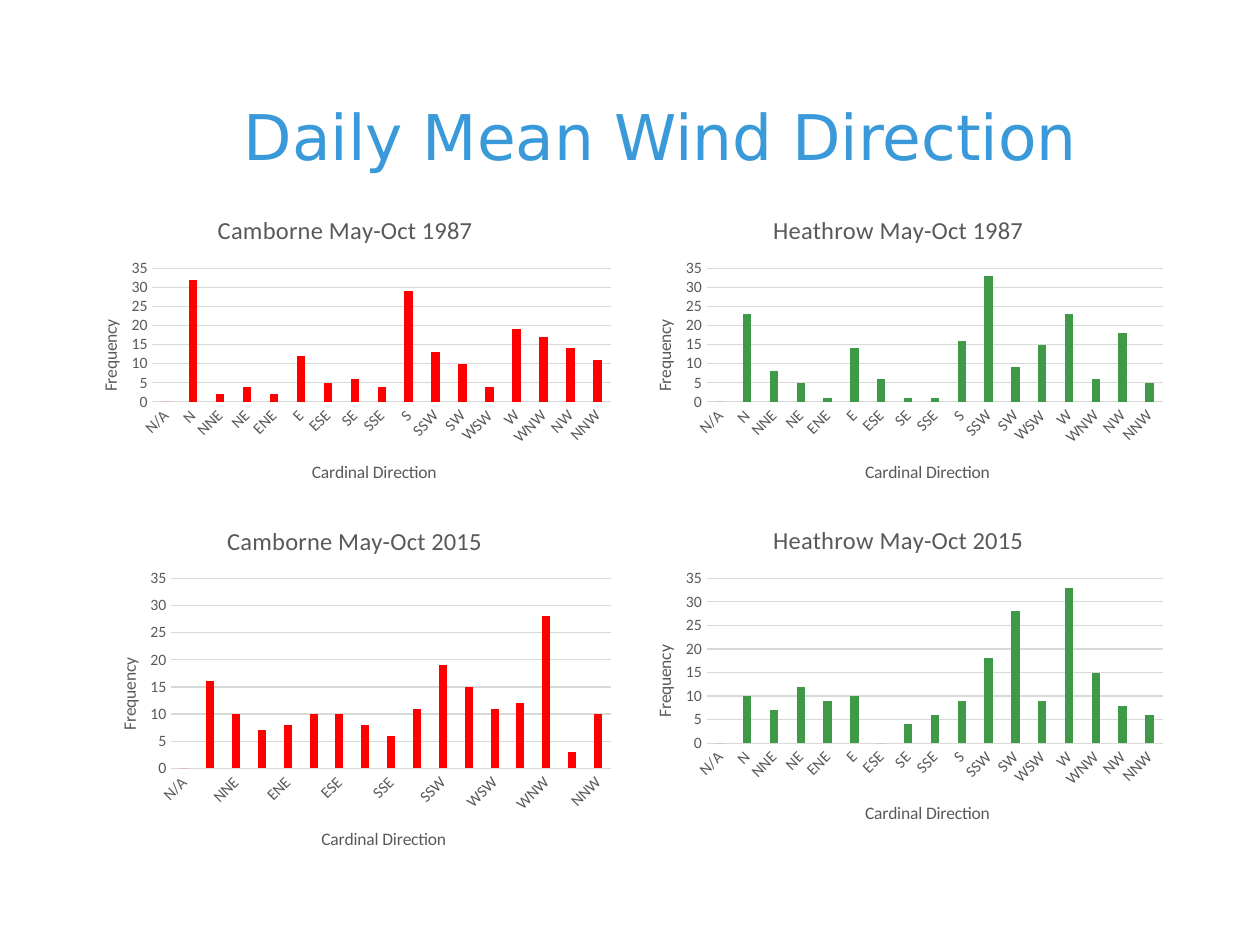
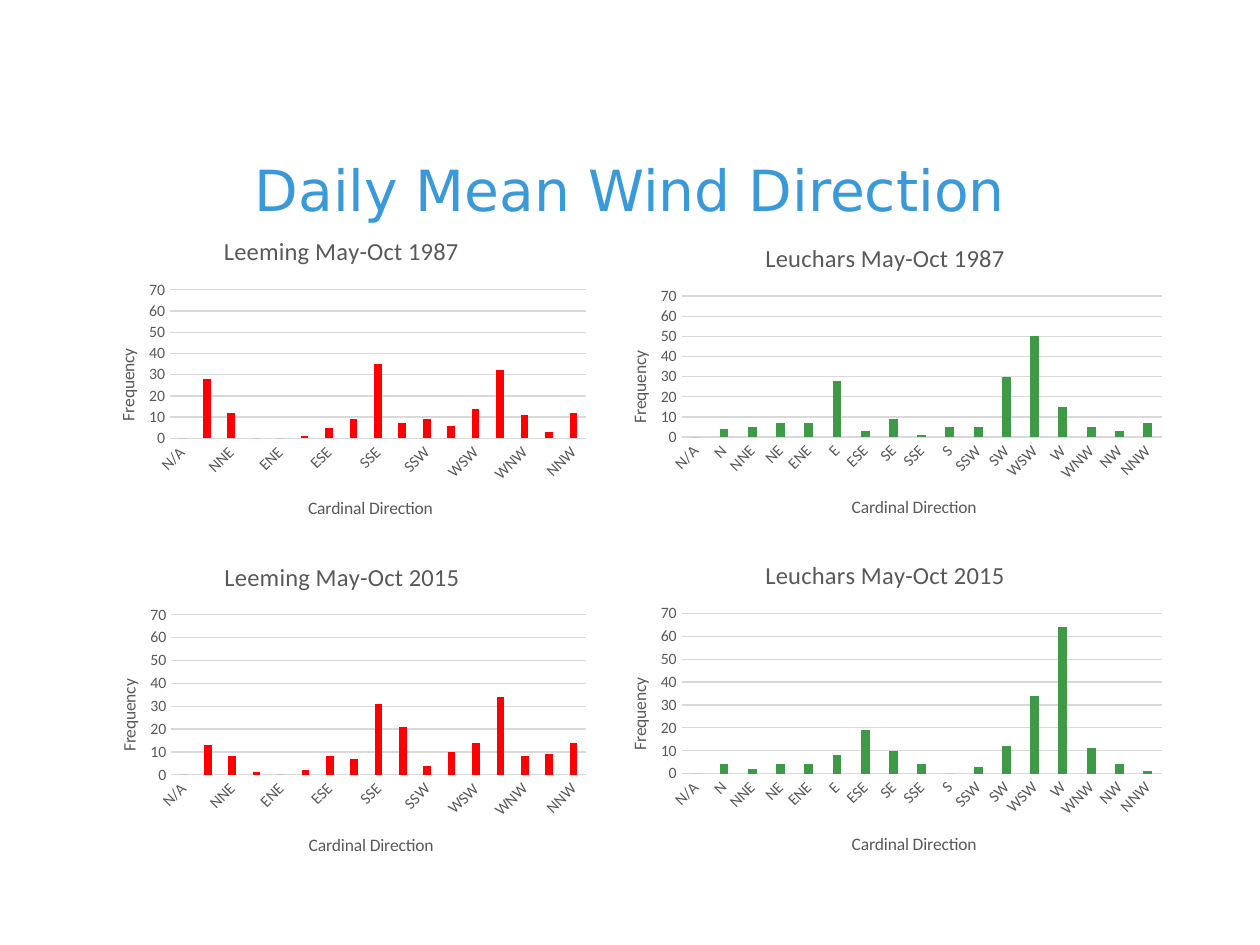
from lxml import etree
from pptx import Presentation
from pptx import util as u
from pptx.chart import data as chart_data
from pptx.dml import color
from pptx.enum import chart as ch, text
from pptx.oxml import ns

COLOURS = {"title": "3A9AD9", "label": "595959", "grid": "D9D9D9",
           "west": "FF0000", "east": "3F9A47"}
TITLE_FONT, CHART_FONT = "DejaVu Sans", "Calibri"
HEADING = "Daily Mean Wind Direction"
DIRECTIONS = ["N/A", "N", "NNE", "NE", "ENE", "E", "ESE", "SE", "SSE", "S",
              "SSW", "SW", "WSW", "W", "WNW", "NW", "NNW"]

# Plot margins and axis title offsets inside every chart, in inches
PLOT = {"left": 0.67, "top": 0.58, "right": 0.09, "bottom": 0.82}
DIRECTION_TITLE = {"half": 0.58, "from_bottom": 0.38}
FREQUENCY_TITLE = {"half": 0.15, "from_left": 0.22}

# Each chart: station and period, colour, box, daily counts by direction
SLIDES = [
    {"title_box": (0.5, 0.59, 9, 0.96), "title_size": 36, "indent": 0.59,
     "top": 35, "step": 5, "charts": [
         ("Camborne May-Oct 1987", "west", (0.54, 1.55, 4.4, 2.46),
          (0, 32, 2, 4, 2, 12, 5, 6, 4, 29, 13, 10, 4, 19, 17, 14, 11)),
         ("Camborne May-Oct 2015", "west", (0.69, 4.01, 4.25, 2.91),
          (0, 16, 10, 7, 8, 10, 10, 8, 6, 11, 19, 15, 11, 12, 28, 3, 10)),
         ("Heathrow May-Oct 1987", "east", (4.94, 1.55, 4.38, 2.46),
          (0, 23, 8, 5, 1, 14, 6, 1, 1, 16, 33, 9, 15, 23, 6, 18, 5)),
         ("Heathrow May-Oct 2015", "east", (4.94, 4.01, 4.38, 2.71),
          (0, 10, 7, 12, 9, 10, 0, 4, 6, 9, 18, 28, 9, 33, 15, 8, 6))]},
    {"title_box": (0.69, 1.24, 8.62, 0.52), "title_size": 32.4, "indent": 0.1,
     "top": 70, "step": 10, "charts": [
         ("Leeming May-Oct 1987", "west", (0.68, 1.72, 4.06, 2.58),
          (0, 28, 12, 0, 0, 1, 5, 9, 35, 7, 9, 6, 14, 32, 11, 3, 12)),
         ("Leuchars May-Oct 1987", "east", (4.74, 1.77, 4.57, 2.52),
          (0, 4, 5, 7, 7, 28, 3, 9, 1, 5, 5, 30, 50, 15, 5, 3, 7)),
         ("Leeming May-Oct 2015", "west", (0.69, 4.3, 4.05, 2.67),
          (0, 13, 8, 1, 0, 2, 8, 7, 31, 21, 4, 10, 14, 34, 8, 9, 14)),
         ("Leuchars May-Oct 2015", "east", (4.74, 4.29, 4.57, 2.67),
          (0, 4, 2, 4, 4, 8, 19, 10, 4, 0, 3, 12, 34, 64, 11, 4, 1))]},
]


def rgb(name):
    return color.RGBColor.from_string(COLOURS[name])


def set_values(target, values):
    for key, value in values.items():
        setattr(target, key, value)


def set_font(font, size, colour="label", name=CHART_FONT):
    set_values(font, {"size": u.Pt(size), "name": name, "bold": False})
    font.color.rgb = rgb(colour)


def set_layout(element, position, values):
    """Place a chart part by fractions of the chart's size."""
    for old in element.findall(ns.qn("c:layout")):
        element.remove(old)
    layout = etree.Element(ns.qn("c:layout"))
    manual = etree.SubElement(layout, ns.qn("c:manualLayout"))
    for tag, value in values.items():
        shown = value if isinstance(value, str) else f"{value:.4f}"
        etree.SubElement(manual, ns.qn(f"c:{tag}")).set("val", shown)
    element.insert(position, layout)


def add_caption(owner, frame_owner, wording, size):
    owner.has_title = True
    frame = getattr(owner, frame_owner).text_frame
    frame.text = wording
    set_font(frame.paragraphs[0].runs[0].font, size)
    return getattr(owner, frame_owner)


def add_heading(slide, box, size, indent):
    title = slide.shapes.title
    set_values(title, dict(zip(("left", "top", "width", "height"),
                               map(u.Inches, box))))
    frame = title.text_frame
    frame.text = HEADING
    set_values(frame, {"word_wrap": True, "margin_left": u.Inches(indent),
                       "auto_size": text.MSO_AUTO_SIZE.NONE,
                       "vertical_anchor": text.MSO_ANCHOR.MIDDLE})
    heading = frame.paragraphs[0]
    heading.alignment = text.PP_ALIGN.CENTER
    set_font(heading.runs[0].font, size, "title", TITLE_FONT)


def place_plot(chart, direction_title, frequency_title, width, height):
    plot_width = width - PLOT["left"] - PLOT["right"]
    plot_height = height - PLOT["top"] - PLOT["bottom"]
    edges = {"xMode": "edge", "yMode": "edge"}
    plot_area = chart._chartSpace.find(".//" + ns.qn("c:plotArea"))
    set_layout(plot_area, 0, {
        "layoutTarget": "inner", **edges,
        "x": PLOT["left"] / width, "y": PLOT["top"] / height,
        "w": plot_width / width, "h": plot_height / height})
    set_layout(direction_title._element, 1, {
        **edges,
        "x": (PLOT["left"] + plot_width / 2 - DIRECTION_TITLE["half"]) / width,
        "y": 1 - DIRECTION_TITLE["from_bottom"] / height})
    set_layout(frequency_title._element, 1, {
        **edges,
        "x": FREQUENCY_TITLE["from_left"] / width,
        "y": (PLOT["top"] + plot_height / 2 - FREQUENCY_TITLE["half"]) / height})


def add_wind_chart(slide, station, colour, box, counts, top, step):
    wind = chart_data.CategoryChartData()
    wind.categories = DIRECTIONS
    wind.add_series(station, counts)
    chart = slide.shapes.add_chart(ch.XL_CHART_TYPE.COLUMN_CLUSTERED,
                                   *map(u.Inches, box), wind).chart
    chart.has_legend = False
    set_font(chart.font, 10)
    add_caption(chart, "chart_title", station, 14)
    chart.chart_title.include_in_layout = False

    # Bars
    bars = chart.plots[0]
    set_values(bars, {"gap_width": 219, "overlap": -27,
                      "vary_by_categories": False})
    bars.series[0].invert_if_negative = False
    bars.series[0].format.fill.solid()
    bars.series[0].format.fill.fore_color.rgb = rgb(colour)

    # Axes
    directions, frequency = chart.category_axis, chart.value_axis
    for axis in (directions, frequency):
        set_values(axis, {"major_tick_mark": ch.XL_TICK_MARK.NONE,
                          "minor_tick_mark": ch.XL_TICK_MARK.NONE})
        set_font(axis.tick_labels.font, 9)
    set_values(frequency, {"minimum_scale": 0, "maximum_scale": top,
                           "major_unit": step, "has_major_gridlines": True})
    frequency.format.line.fill.background()
    for line in (directions.format.line, frequency.major_gridlines.format.line):
        line.color.rgb = rgb("grid")
        line.width = u.Pt(0.75)
    label_body = directions._element.find(
        ns.qn("c:txPr") + "/" + ns.qn("a:bodyPr"))
    label_body.set("rot", "-60000000")  # automatic label angle
    label_body.set("vert", "horz")

    # Axis titles
    direction_title = add_caption(directions, "axis_title",
                                  "Cardinal Direction", 10)
    frequency_title = add_caption(frequency, "axis_title", "Frequency", 10)
    frequency_body = frequency_title._element.find(".//" + ns.qn("a:bodyPr"))
    frequency_body.set("rot", "-5400000")
    frequency_body.set("vert", "horz")
    place_plot(chart, direction_title, frequency_title, *box[2:])


def add_wind_slide(deck, content):
    slide = deck.slides.add_slide(deck.slide_layouts[5])
    add_heading(slide, content["title_box"], content["title_size"],
                content["indent"])
    for station, colour, box, counts in content["charts"]:
        add_wind_chart(slide, station, colour, box, counts,
                       content["top"], content["step"])


def main():
    deck = Presentation()
    set_values(deck, {"slide_width": u.Inches(10),
                      "slide_height": u.Inches(7.5)})
    for content in SLIDES:
        add_wind_slide(deck, content)
    deck.save("out.pptx")


if __name__ == "__main__":
    main()
